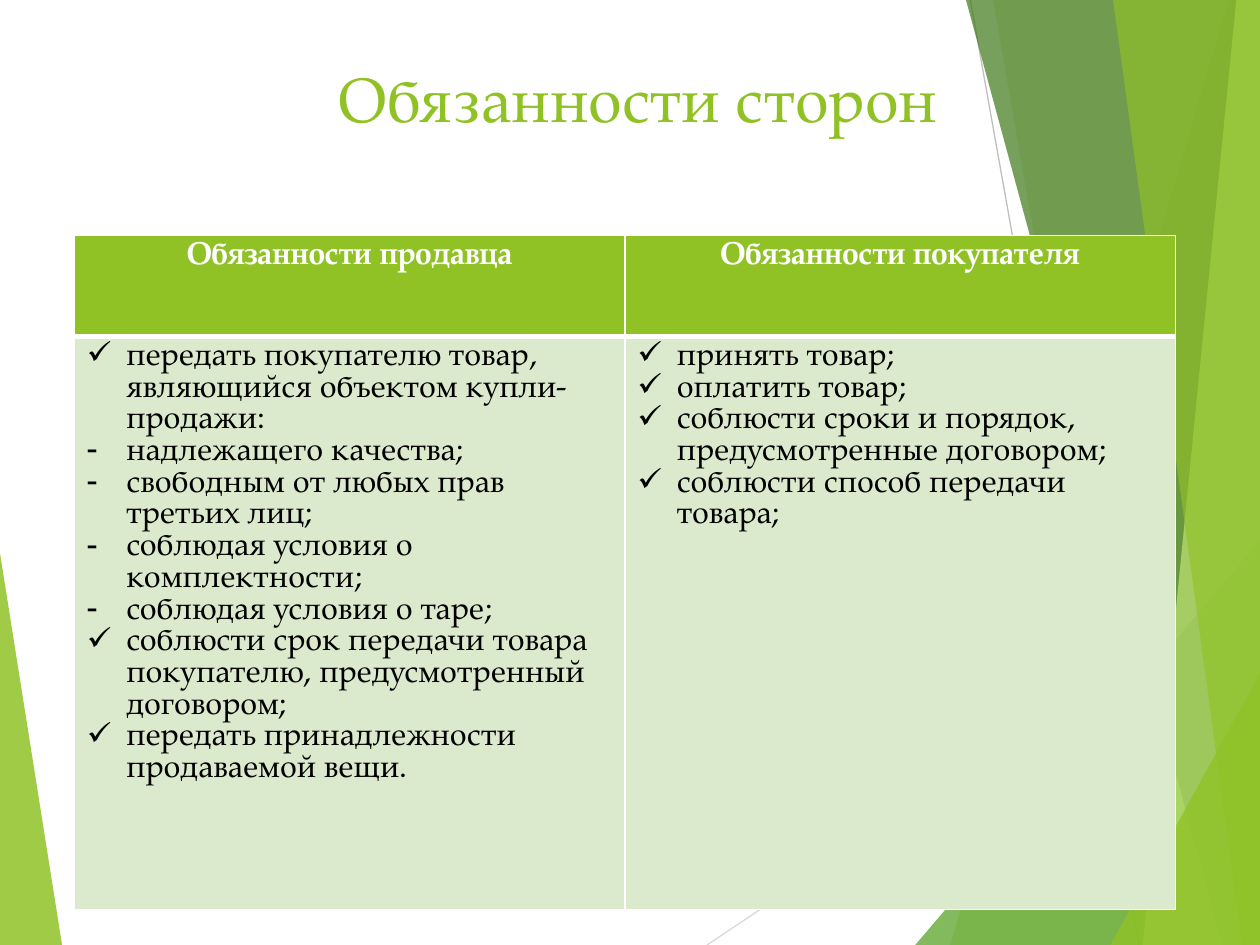
from dataclasses import dataclass

import pptx
import pptx.dml.color
import pptx.enum.shapes
import pptx.enum.text
import pptx.oxml
import pptx.oxml.ns
import pptx.util
from lxml import etree

Pt = pptx.util.Pt
qn = pptx.oxml.ns.qn
CENTER = pptx.enum.text.PP_ALIGN.CENTER
WIDTH, HEIGHT = 720, 540


@dataclass(frozen=True)
class Theme:
    font: str = "TeX Gyre Pagella"
    title_size: int = 36
    table_size: int = 18
    green: str = "90C226"
    leaf: str = "54A021"
    forest: str = "3F7819"
    lime: str = "C0E474"
    pale: str = "DBE9CD"
    white: str = "FFFFFF"
    black: str = "000000"
    light_gray: str = "D9D9D9"
    gray: str = "BFBFBF"


def rgb(color):
    return pptx.dml.color.RGBColor.from_string(color)


class SlideWriter:
    def __init__(self, slide, theme):
        self.shapes = slide.shapes
        self.theme = theme

    def style_font(self, paragraph, size, color, bold=False):
        font = paragraph.font
        font.name, font.size, font.bold = self.theme.font, Pt(size), bold
        font.color.rgb = rgb(color)

    def facet(self, points, color, opacity):
        """Draw a translucent polygon; opacity is in percent."""
        start, *rest = [(Pt(x), Pt(y)) for x, y in points]
        builder = self.shapes.build_freeform(*start)
        builder.add_line_segments(rest, close=True)
        facet = builder.convert_to_shape()
        facet.shadow.inherit = False
        facet.line.fill.background()
        facet.fill.solid()
        facet.fill.fore_color.rgb = rgb(color)
        color_node = facet.fill._xPr.find(".//" + qn("a:srgbClr"))
        etree.SubElement(color_node, qn("a:alpha"), val=str(opacity * 1000))

    def line(self, start, end, color):
        line = self.shapes.add_connector(
            pptx.enum.shapes.MSO_CONNECTOR.STRAIGHT, *map(Pt, start + end))
        line.line.color.rgb = rgb(color)
        line.line.width = Pt(0.75)
        etree.SubElement(line._element.spPr, qn("a:effectLst"))

    def title(self, text, left, top, width, height):
        frame = self.shapes.add_textbox(*map(Pt, (left, top, width, height))).text_frame
        frame.word_wrap = True
        frame.vertical_anchor = pptx.enum.text.MSO_ANCHOR.BOTTOM
        frame.margin_bottom = Pt(5.8)
        heading = frame.paragraphs[0]
        heading.text, heading.alignment = text, CENTER
        self.style_font(heading, self.theme.title_size, self.theme.green)

    def table(self, columns, left, top, column_width, row_heights):
        """Draw a header row and one row of lists from {header: [(bullet, text)]}."""
        table = self.shapes.add_table(
            2, len(columns), Pt(left), Pt(top),
            Pt(column_width * len(columns)), Pt(sum(row_heights))).table
        for row, height in zip(table.rows, row_heights):
            row.height = Pt(height)
        for index, (header, duties) in enumerate(columns.items()):
            table.columns[index].width = Pt(column_width)
            self.header_cell(table.cell(0, index), header)
            self.list_cell(table.cell(1, index), duties)

    def header_cell(self, cell, text):
        self.frame_cell(cell, self.theme.green, top=1, bottom=3)
        header = cell.text_frame.paragraphs[0]
        header.text, header.alignment = text, CENTER
        self.style_font(header, self.theme.table_size, self.theme.white, bold=True)

    def list_cell(self, cell, duties):
        self.frame_cell(cell, self.theme.pale, top=3, bottom=1)
        frame = cell.text_frame
        for index, (bullet, text) in enumerate(duties):
            duty = frame.add_paragraph() if index else frame.paragraphs[0]
            duty.text = text
            properties = duty._p.get_or_add_pPr()
            properties.set("marL", str(Pt(22.5)))
            properties.set("indent", str(-Pt(22.5)))
            etree.SubElement(properties, qn("a:buChar"), char=bullet)
            self.style_font(duty, self.theme.table_size, self.theme.black)

    def frame_cell(self, cell, color, top, bottom):
        """Fill the cell and give it white borders."""
        cell.fill.solid()
        cell.fill.fore_color.rgb = rgb(color)
        properties = cell._tc.get_or_add_tcPr()
        borders = {"lnL": 1, "lnR": 1, "lnT": top, "lnB": bottom}
        for index, (side, width) in enumerate(borders.items()):
            border = etree.Element(qn("a:" + side), w=str(Pt(width)))
            fill = etree.SubElement(border, qn("a:solidFill"))
            etree.SubElement(fill, qn("a:srgbClr"), val=self.theme.white)
            properties.insert(index, border)


def draw_background(writer):
    theme = writer.theme
    top_right, bottom_right = (WIDTH, 0), (WIDTH, HEIGHT)
    writer.facet([(0, 316), (35.5, HEIGHT), (0, HEIGHT)], theme.green, 85)
    writer.line((404, HEIGHT), (WIDTH, 329), theme.light_gray)
    writer.line((554.5, 0), (651, HEIGHT), theme.gray)
    bands = [
        (702, 543, theme.green, 30),
        (567.5, 661.5, theme.green, 20),
        ((WIDTH, 309), 523, theme.leaf, 72),
        (552, 698.5, theme.forest, 70),
        (706.5, 653, theme.lime, 70),
        (636, 710, theme.green, 65),
        ((WIDTH, 385), 634.5, theme.green, 80),
    ]
    for upper, lower_x, color, opacity in bands:
        if isinstance(upper, tuple):
            outline = [upper, bottom_right, (lower_x, HEIGHT)]
        else:
            outline = [(upper, 0), (lower_x, HEIGHT), bottom_right, top_right]
        writer.facet(outline, color, opacity)


def main():
    presentation = pptx.Presentation()
    presentation.slide_width, presentation.slide_height = Pt(WIDTH), Pt(HEIGHT)
    slide = presentation.slides.add_slide(presentation.slide_layouts[6])
    writer = SlideWriter(slide, Theme())

    draw_background(writer)
    writer.title("Обязанности сторон", 40.3, 26, 648, 57)
    check, dash = "✓", "-"
    duties = {
        "Обязанности продавца": [
            (check, "передать покупателю товар, являющийся объектом купли-продажи:"),
            (dash, "надлежащего качества;"),
            (dash, "свободным от любых прав третьих лиц;"),
            (dash, "соблюдая условия о комплектности;"),
            (dash, "соблюдая условия о таре;"),
            (check, "соблюсти срок передачи товара покупателю, предусмотренный договором;"),
            (check, "передать принадлежности продаваемой вещи."),
        ],
        "Обязанности покупателя": [
            (check, "принять товар;"),
            (check, "оплатить товар;"),
            (check, "соблюсти сроки и порядок, предусмотренные договором;"),
            (check, "соблюсти способ передачи товара;"),
        ],
    }
    writer.table(duties, 42.5, 134.6, 314.6, (57.6, 327.6))
    presentation.save("out.pptx")


if __name__ == "__main__":
    main()
